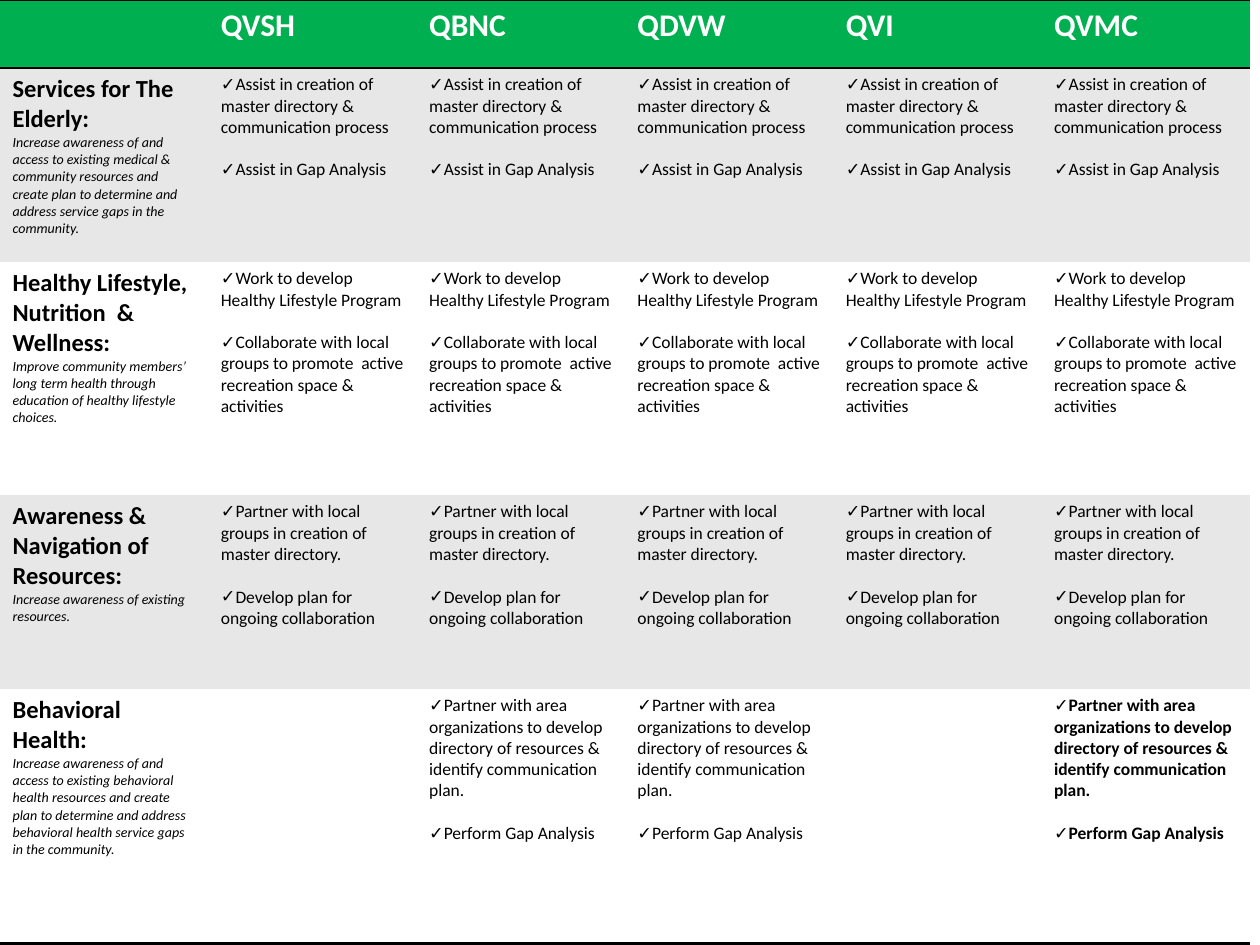
from lxml import etree
from pptx import Presentation
from pptx.dml.color import RGBColor
from pptx.oxml.ns import qn
from pptx.util import Inches, Pt

GREEN = RGBColor(0x00, 0xB0, 0x50)
GRAY = RGBColor(0xE7, 0xE7, 0xE7)
WHITE = RGBColor(0xFF, 0xFF, 0xFF)
BLACK = RGBColor(0x00, 0x00, 0x00)
NO_STYLE = "{2D5ABB26-0587-4C30-8999-92F81FD0307C}"

PARTNERS = ["QVSH", "QBNC", "QDVW", "QVI", "QVMC"]
TABLE_WIDTH = 0.992  # share of the slide width
ROW_SHARES = [height / 7.5 for height in (0.54, 1.54, 1.85, 1.54, 2.02)]

# (focus area, goal, actions, partners taking part, partners in bold)
FOCUS_AREAS = [
    ("Services for The Elderly:",
     "Increase awareness of and access to existing medical & community resources "
     "and create plan to determine and address service gaps in the community.",
     ["Assist in creation of master directory & communication process",
      "Assist in Gap Analysis"], PARTNERS, []),
    ("Healthy Lifestyle,  Nutrition  & Wellness:",
     "Improve community members’ long term health through education of healthy "
     "lifestyle choices.",
     ["Work to develop Healthy Lifestyle Program",
      "Collaborate with local groups to promote  active recreation space & activities"],
     PARTNERS, []),
    ("Awareness & Navigation of Resources:",
     "Increase awareness of existing resources.",
     ["Partner with local groups in creation of master directory.",
      "Develop plan for ongoing collaboration"], PARTNERS, []),
    ("Behavioral Health:",
     "Increase awareness of and access to existing behavioral health resources and "
     "create plan to determine and address behavioral health service gaps in the "
     "community.",
     ["Partner with area organizations to develop directory of resources & identify "
      "communication plan.", "Perform Gap Analysis"],
     ["QBNC", "QDVW", "QVMC"], ["QVMC"]),
]


class SlideBuilder:
    font_name = "Calibri"
    border_width = Pt(1.5)

    def __init__(self, presentation):
        self.width = presentation.slide_width
        self.height = presentation.slide_height
        self.slide = presentation.slides.add_slide(presentation.slide_layouts[6])

    def table(self, column_count, width_share, row_shares):
        width = int(self.width * width_share)
        heights = [int(self.height * share) for share in row_shares]
        frame = self.slide.shapes.add_table(
            len(heights), column_count, 0, 0, width, sum(heights))
        grid = frame.table
        grid.first_row = grid.horz_banding = False
        for style_id in frame.element.iter(qn("a:tableStyleId")):
            style_id.text = NO_STYLE
        for column in grid.columns:
            column.width = width // column_count
        for row, height in zip(grid.rows, heights):
            row.height = height
        return grid

    def fill(self, cell, color):
        cell.fill.solid()
        cell.fill.fore_color.rgb = color

    def borders(self, cell, *sides):
        """Draw black borders on the given sides, named in schema order (T, B)."""
        properties = cell._tc.get_or_add_tcPr()
        for position, side in enumerate(sides):
            line = etree.Element(qn(f"a:ln{side}"), w=str(self.border_width))
            solid = etree.SubElement(line, qn("a:solidFill"))
            etree.SubElement(solid, qn("a:srgbClr"), val=str(BLACK))
            properties.insert(position, line)

    def paragraph(self, cell, text, size, color=BLACK, bold=False, italic=False,
                  bullet=None, gap=0):
        """Write into the cell's empty paragraph, or append one after a gap."""
        frame = cell.text_frame
        paragraph = frame.paragraphs[0]
        if frame.text:
            paragraph = frame.add_paragraph()
            paragraph.space_before = Pt(gap)
        paragraph.text = text
        if bullet:
            properties = paragraph._p.get_or_add_pPr()
            properties.set("marL", "0")
            properties.set("indent", "0")
            etree.SubElement(properties, qn("a:buFont"), typeface=self.font_name)
            etree.SubElement(properties, qn("a:buChar"), char=bullet)
        font = paragraph.font
        font.name, font.size = self.font_name, Pt(size)
        font.bold, font.italic = bold, italic
        font.color.rgb = color

    def header_row(self, grid, labels):
        for column, label in enumerate(labels):
            cell = grid.cell(0, column)
            self.fill(cell, GREEN)
            self.borders(cell, "T", "B")
            if label:
                self.paragraph(cell, label, 18, WHITE, bold=True)

    def focus_row(self, grid, row, focus_area):
        heading, goal, actions, active, emphasized = focus_area
        for column in range(len(grid.columns)):
            self.fill(grid.cell(row, column), GRAY if row % 2 else WHITE)
        self.paragraph(grid.cell(row, 0), heading, 14, bold=True)
        self.paragraph(grid.cell(row, 0), goal, 8, italic=True)
        for column, partner in enumerate(PARTNERS, start=1):
            if partner in active:
                for action in actions:
                    self.paragraph(grid.cell(row, column), action, 10,
                                   bold=partner in emphasized, bullet="✓", gap=12.2)


def main():
    presentation = Presentation()
    presentation.slide_width, presentation.slide_height = Inches(10), Inches(7.5)
    builder = SlideBuilder(presentation)
    grid = builder.table(len(PARTNERS) + 1, TABLE_WIDTH, ROW_SHARES)
    builder.header_row(grid, [""] + PARTNERS)
    for row, focus_area in enumerate(FOCUS_AREAS, start=1):
        builder.focus_row(grid, row, focus_area)
    for column in range(len(grid.columns)):
        builder.borders(grid.cell(len(FOCUS_AREAS), column), "B")
    presentation.save("out.pptx")


if __name__ == "__main__":
    main()
